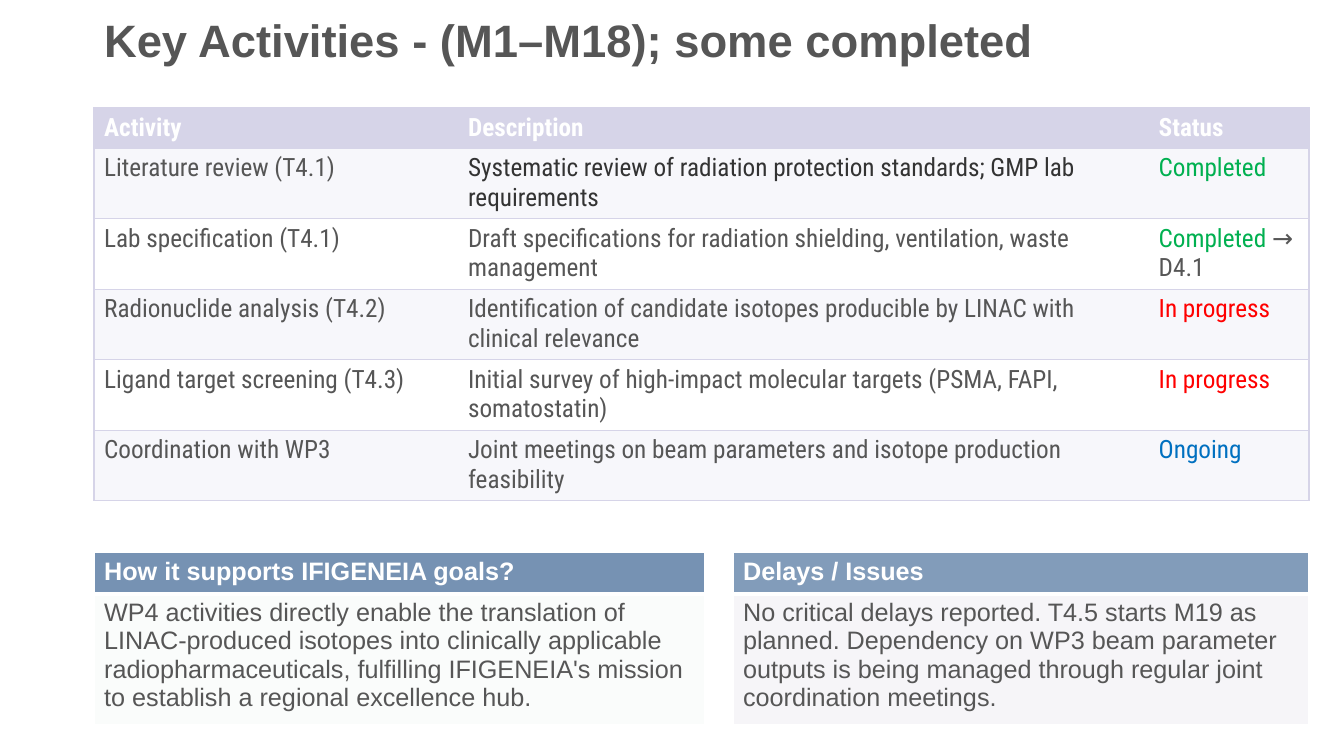
import pptx
import pptx.dml.color
import pptx.enum.text
import pptx.oxml
import pptx.oxml.ns
import pptx.util

WIDE, HIGH = 13.33, 7.5
COLS, ROWS = 100, 100
LEFT, BASE = 7, 73.07
HUES = {
    "white": "FFFFFF", "grey": "565656", "dark": "333333",
    "lilac": "D6D4E8", "pale": "F7F7FB", "steel": "4B719C",
    "mint": "E6F1EE", "mist": "E9E8EF",
    "green": "00B050", "red": "FF0000", "blue": "0070C0",
}
NO_STYLE = "{2D5ABB26-0587-4C30-8999-92F81FD0307C}"
HEADS = ["Activity", "Description", "Status"]
TASKS = [
    ("Literature review (T4.1)",
     "Systematic review of radiation protection standards; GMP lab requirements",
     [("Completed", "green")]),
    ("Lab specification (T4.1)",
     "Draft specifications for radiation shielding, ventilation, waste management",
     [("Completed", "green"), (" → D4.1", "grey")]),
    ("Radionuclide analysis (T4.2)",
     "Identification of candidate isotopes producible by LINAC with clinical relevance",
     [("In progress", "red")]),
    ("Ligand target screening (T4.3)",
     "Initial survey of high-impact molecular targets (PSMA, FAPI, somatostatin)",
     [("In progress", "red")]),
    ("Coordination with WP3",
     "Joint meetings on beam parameters and isotope production feasibility",
     [("Ongoing", "blue")]),
]
GOALS = (
    "WP4 activities directly enable the translation of LINAC-produced isotopes "
    "into clinically applicable radiopharmaceuticals, fulfilling IFIGENEIA's "
    "mission to establish a regional excellence hub."
)
DELAYS = (
    "No critical delays reported. T4.5 starts M19 as planned. Dependency on WP3 "
    "beam parameter outputs is being managed through regular joint coordination "
    "meetings."
)


def across(cols):
    return pptx.util.Inches(WIDE * cols / COLS)


def down(rows):
    return pptx.util.Inches(HIGH * rows / ROWS)


def tint(name):
    return pptx.dml.color.RGBColor.from_string(HUES[name])


def write(frame, text, hue="grey", font="Arial", size=18, bold=False, lead=None):
    parts = [(text, hue)] if isinstance(text, str) else text
    para = frame.paragraphs[0]
    if lead:
        para.line_spacing = lead
    for words, shade in parts:
        run = para.add_run()
        run.text = words
        run.font.name = font
        run.font.size = pptx.util.Pt(size)
        run.font.bold = bold
        run.font.color.rgb = tint(shade)


def paint(cell, hue, alpha=100):
    cell.fill.solid()
    cell.fill.fore_color.rgb = tint(hue)
    if alpha < 100:
        props = cell._tc.get_or_add_tcPr()
        shade = props.find(pptx.oxml.ns.qn("a:solidFill"))[0]
        shade.append(pptx.oxml.parse_xml(
            f'<a:alpha {pptx.oxml.ns.nsdecls("a")} val="{alpha * 1000}"/>'))


def edge(cell, hue, **widths):
    props = cell._tc.get_or_add_tcPr()
    sides = [side for side in "LRTB" if side in widths]
    for spot, side in enumerate(sides):
        props.insert(spot, pptx.oxml.parse_xml(
            f'<a:ln{side} {pptx.oxml.ns.nsdecls("a")} w="{pptx.util.Pt(widths[side])}">'
            f'<a:solidFill><a:srgbClr val="{HUES[hue]}"/></a:solidFill></a:ln{side}>'))


def add_grid(slide, left, top, widths, heights):
    frame = slide.shapes.add_table(
        len(heights), len(widths), across(left), down(top),
        across(sum(widths)), down(sum(heights)))
    table = frame.table
    table.first_row = table.horz_banding = False
    table._tbl.tblPr.find(pptx.oxml.ns.qn("a:tableStyleId")).text = NO_STYLE
    for col, width in zip(table.columns, widths):
        col.width = across(width)
    for row, height in zip(table.rows, heights):
        row.height = down(height)
    return table


def add_title(slide, text):
    box = slide.shapes.add_textbox(across(LEFT), down(1.73), across(80.35), down(7.87))
    frame = box.text_frame
    frame.word_wrap = True
    frame.vertical_anchor = pptx.enum.text.MSO_ANCHOR.MIDDLE
    write(frame, text, size=32.4, bold=True, lead=0.9)


def add_tasks(slide):
    table = add_grid(slide, LEFT, 14.27, [27.08, 51.39, 11.93],
                     [5.33] + [9.33] * len(TASKS))
    for y, line in enumerate([HEADS] + TASKS):
        for x, text in enumerate(line):
            cell = table.cell(y, x)
            hue = "white" if y == 0 else "dark" if (y, x) == (1, 1) else "grey"
            write(cell.text_frame, text, hue, "Roboto Condensed", bold=y == 0)
            paint(cell, "lilac" if y == 0 else "pale" if y % 2 else "white")
            sides = {"T": 1, "B": 1}
            if x == 0:
                sides["L"] = 1
            if x == len(line) - 1:
                sides["R"] = 1
            edge(cell, "lilac", **sides)


def add_card(slide, left, width, head, body, head_alpha, hue, alpha):
    table = add_grid(slide, left, BASE, [width], [5.47, 16.13])
    top, low = table.cell(0, 0), table.cell(1, 0)
    write(top.text_frame, head, "white", bold=True)
    paint(top, "steel", head_alpha)
    edge(top, "white", L=1, R=1, T=1, B=3)
    write(low.text_frame, body)
    paint(low, hue, alpha)
    edge(low, "white", L=1, R=1, T=3, B=1)


def main():
    deck = pptx.Presentation()
    deck.slide_width, deck.slide_height = across(COLS), down(ROWS)
    slide = deck.slides.add_slide(deck.slide_layouts[6])
    add_tasks(slide)
    add_title(slide, "Key Activities - (M1–M18); some completed")
    add_card(slide, LEFT, 45.39, "How it supports IFIGENEIA goals?", GOALS,
             76, "mint", 20)
    add_card(slide, 54.54, 42.84, "Delays / Issues", DELAYS, 69, "mist", 40)
    deck.save("out.pptx")


if __name__ == "__main__":
    main()
